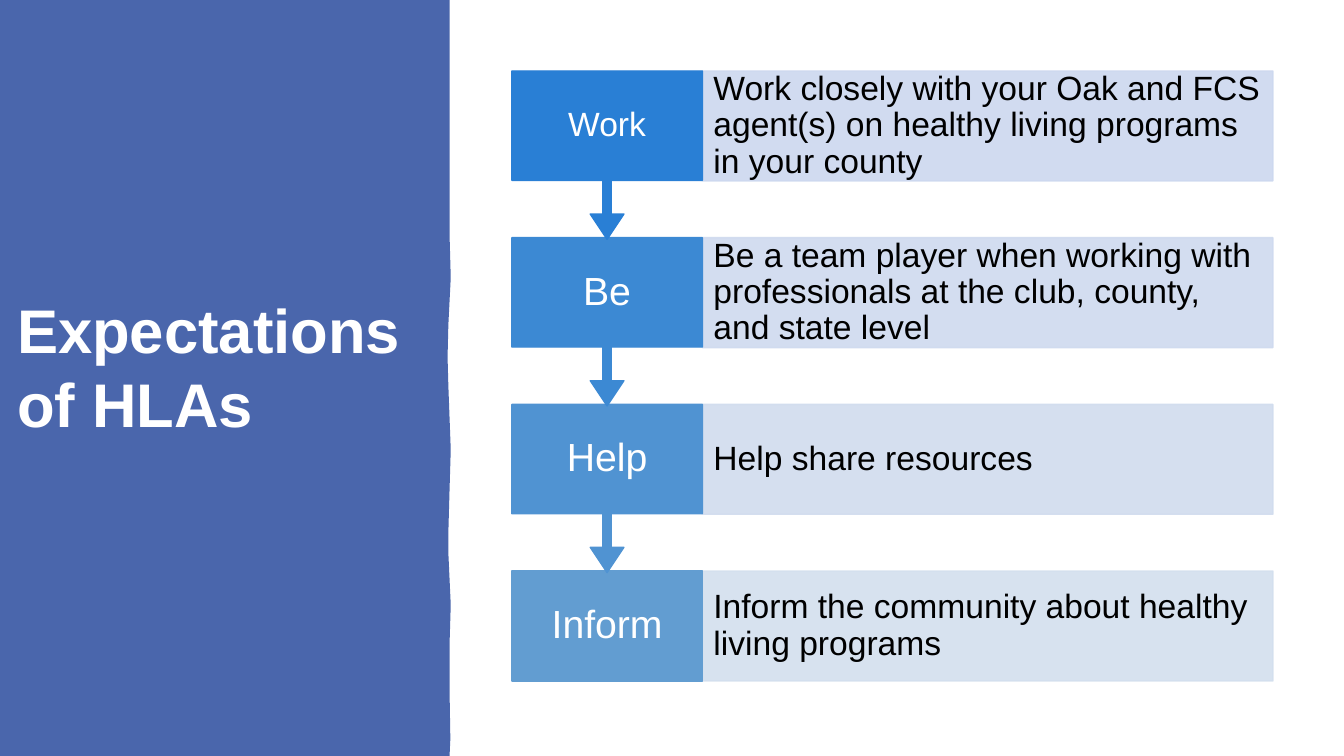
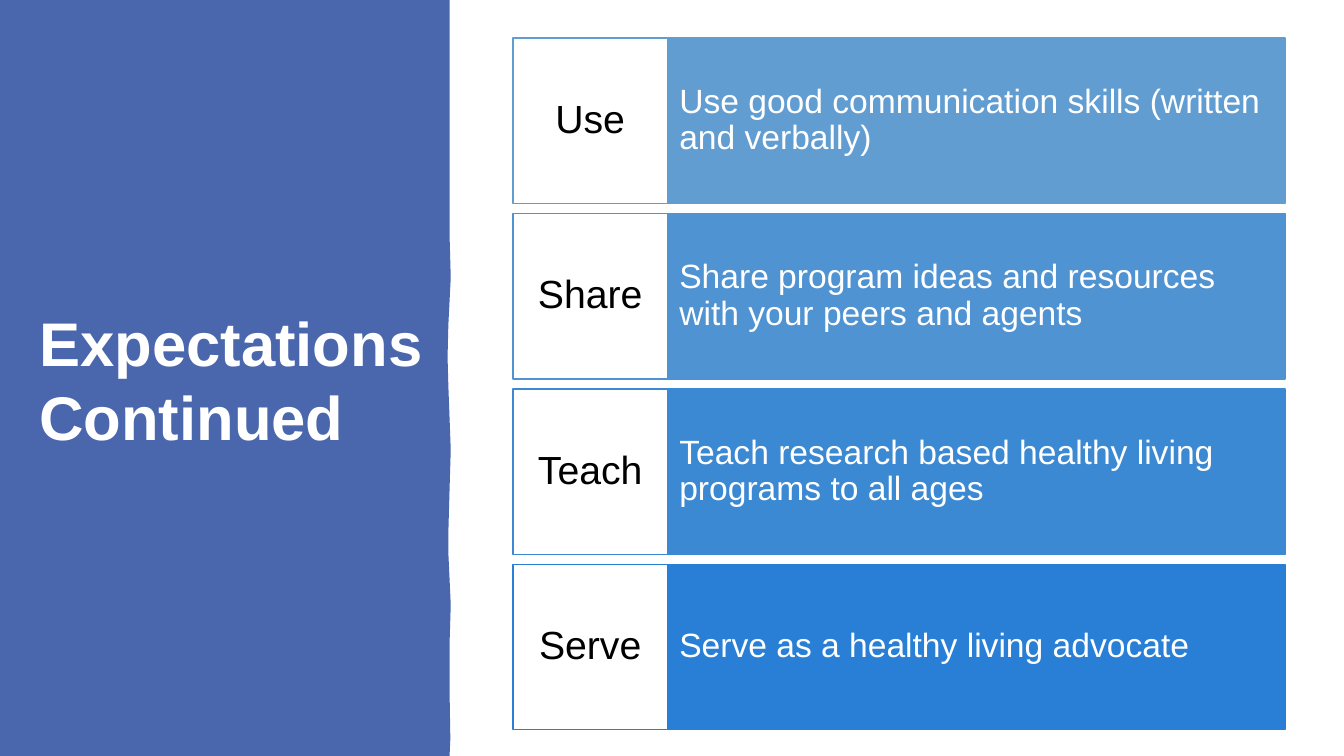
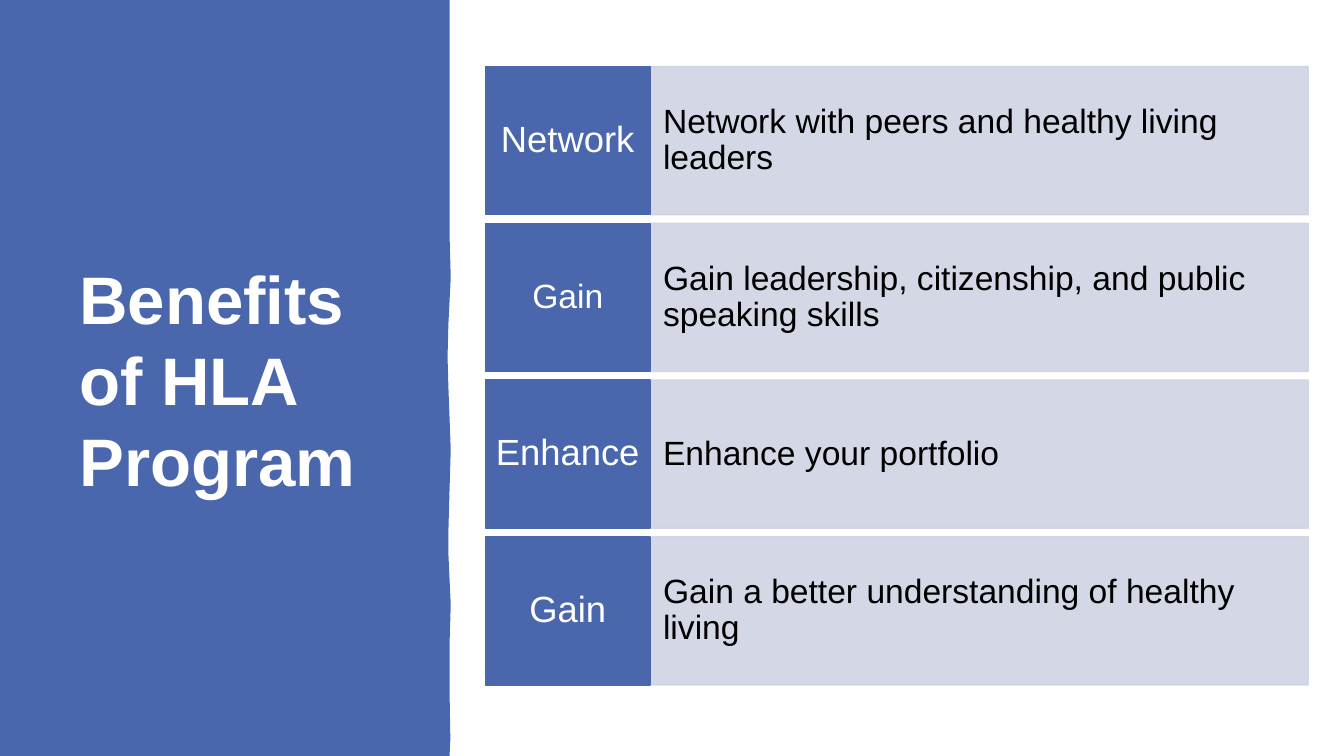
from lxml import etree
from pptx import Presentation
from pptx.dml.color import RGBColor
from pptx.enum.shapes import MSO_SHAPE
from pptx.enum.text import MSO_ANCHOR, PP_ALIGN
from pptx.oxml.ns import qn
from pptx.util import Cm, Pt

RECT = MSO_SHAPE.RECTANGLE
CALLOUT = MSO_SHAPE.DOWN_ARROW_CALLOUT
MIDDLE = MSO_ANCHOR.MIDDLE
LEFT, CENTER = PP_ALIGN.LEFT, PP_ALIGN.CENTER

FONT = "Arial"
WHITE, BLACK, NAVY, PALE = "FFFFFF", "000000", "4A66AC", "D0D3E3"
BLUES = ["297FD5", "3C89D3", "5093D2", "629DD1"]
TINTS = ["CDD8EF", "CFDAEF", "D1DCEE", "D3DFEE"]
WAVE = [(11.33, 0), (11.33, 1.6), (11.33, 2.59), (11.33, 3.58), (11.33, 4.42),
        (11.33, 5.92), (11.36, 7), (11.3, 8.18), (11.28, 9), (11.3, 9.73),
        (11.36, 11.33), (11.33, 12.34), (11.3, 13.41), (11.3, 13.94),
        (11.36, 15.24), (11.33, 16.23), (11.33, 17.4), (11.35, 18.62),
        (11.33, 19.05)]


def write(shape, text, size, color, align, inset, spacing, bold=False):
    tf = shape.text_frame
    tf.text = text
    tf.word_wrap = True
    tf.vertical_anchor = MIDDLE
    tf.margin_left = tf.margin_right = Cm(inset)
    tf.margin_top = tf.margin_bottom = 0
    p = tf.paragraphs[0]
    p.alignment = align
    p.line_spacing = spacing
    font = p.runs[0].font
    font.name, font.size, font.bold = FONT, Pt(size), bold
    font.color.rgb = RGBColor.from_string(color)


def block(s, kind, box, fill, line, alpha=100):
    sp = s.shapes.add_shape(kind, *[Cm(v) for v in box])
    sp.shadow.inherit = False
    sp.fill.solid()
    sp.fill.fore_color.rgb = RGBColor.from_string(fill)
    sp.line.color.rgb = RGBColor.from_string(line)
    sp.line.width = Pt(1)
    if alpha < 100:
        for clr in sp._element.spPr.iter(qn("a:srgbClr")):
            etree.SubElement(clr, qn("a:alpha")).set("val", str(alpha * 1000))
    return sp


slides = [
    {"title": "Expectations of HLAs", "title_box": (0.18, 1.45, 10.95, 15.52), "title_size": 44,
     "left": 12.9, "top": 1.79, "label_w": 4.8, "body_w": 14.38, "height": 2.77, "pitch": 4.2,
     "label_inset": 0.33, "body_inset": 0.28, "arrows": True, "alpha": 90,
     "label_fills": BLUES, "label_lines": BLUES, "label_color": WHITE,
     "body_fills": TINTS, "body_color": BLACK,
     "rows": [
         ("Work", 24, "Work closely with your Oak and FCS agent(s) on healthy living programs in your county"),
         ("Be", 28, "Be a team player when working with professionals at the club, county, and state level"),
         ("Help", 28, "Help share resources"),
         ("Inform", 28, "Inform the community about healthy living programs")]},
    {"title": "Expectations Continued", "title_box": (0.74, 1.78, 10.39, 15.52), "title_size": 44,
     "left": 12.93, "top": 0.96, "label_w": 3.89, "body_w": 15.57, "height": 4.17, "pitch": 4.42,
     "label_inset": 0.2, "body_inset": 0.3, "arrows": False, "alpha": 100,
     "label_fills": [WHITE] * 4, "label_lines": BLUES[::-1], "label_color": BLACK,
     "body_fills": BLUES[::-1], "body_color": WHITE,
     "rows": [
         ("Use", 28, "Use good communication skills (written and verbally)"),
         ("Share", 28, "Share program ideas and resources with your peers and agents"),
         ("Teach", 28, "Teach research based healthy living programs to all ages"),
         ("Serve", 28, "Serve as a healthy living advocate")]},
    {"title": "Benefits of HLA Program", "title_box": (1.75, 1.78, 8.61, 15.52), "title_size": 48,
     "left": 12.24, "top": 1.68, "label_w": 4.14, "body_w": 16.59, "height": 3.73, "pitch": 3.95,
     "label_inset": 0.2, "body_inset": 0.33, "arrows": False, "alpha": 90,
     "label_fills": [NAVY] * 4, "label_lines": [NAVY] * 4, "label_color": WHITE,
     "body_fills": [PALE] * 4, "body_color": BLACK,
     "rows": [
         ("Network", 26, "Network with peers and healthy living leaders"),
         ("Gain", 24, "Gain leadership, citizenship, and public speaking skills"),
         ("Enhance", 26, "Enhance your portfolio"),
         ("Gain", 26, "Gain a better understanding of healthy living")]},
]

prs = Presentation()
prs.slide_width, prs.slide_height = Cm(33.87), Cm(19.05)

for d in slides:
    s = prs.slides.add_slide(prs.slide_layouts[6])

    builder = s.shapes.build_freeform(0, 0)
    builder.add_line_segments([(Cm(x), Cm(y)) for x, y in WAVE + [(0, 19.05)]])
    band = builder.convert_to_shape()
    band.shadow.inherit = False
    band.fill.solid()
    band.fill.fore_color.rgb = RGBColor.from_string(NAVY)
    band.line.fill.background()

    title = s.shapes.add_textbox(*[Cm(v) for v in d["title_box"]])
    write(title, d["title"], d["title_size"], WHITE, LEFT, 0.25, 1.0, True)

    for i in reversed(range(len(d["rows"]))):
        word, size, text = d["rows"][i]
        y = d["top"] + i * d["pitch"]
        body_left = d["left"] + d["label_w"]
        body = block(s, RECT, (body_left, y, d["body_w"], d["height"]),
                     d["body_fills"][i], d["body_fills"][i], d["alpha"])
        write(body, text, 24, d["body_color"], LEFT, d["body_inset"], 0.9)

        arrow = d["arrows"] and i < len(d["rows"]) - 1
        label_h = 4.24 if arrow else d["height"]
        label = block(s, CALLOUT if arrow else RECT, (d["left"], y, d["label_w"], label_h),
                      d["label_fills"][i], d["label_lines"][i])
        if arrow:
            for k, value in enumerate((0.05, 0.1, 0.15, 0.65)):
                label.adjustments[k] = value
        write(label, word, size, d["label_color"], CENTER, d["label_inset"], 0.9)

prs.save("out.pptx")
